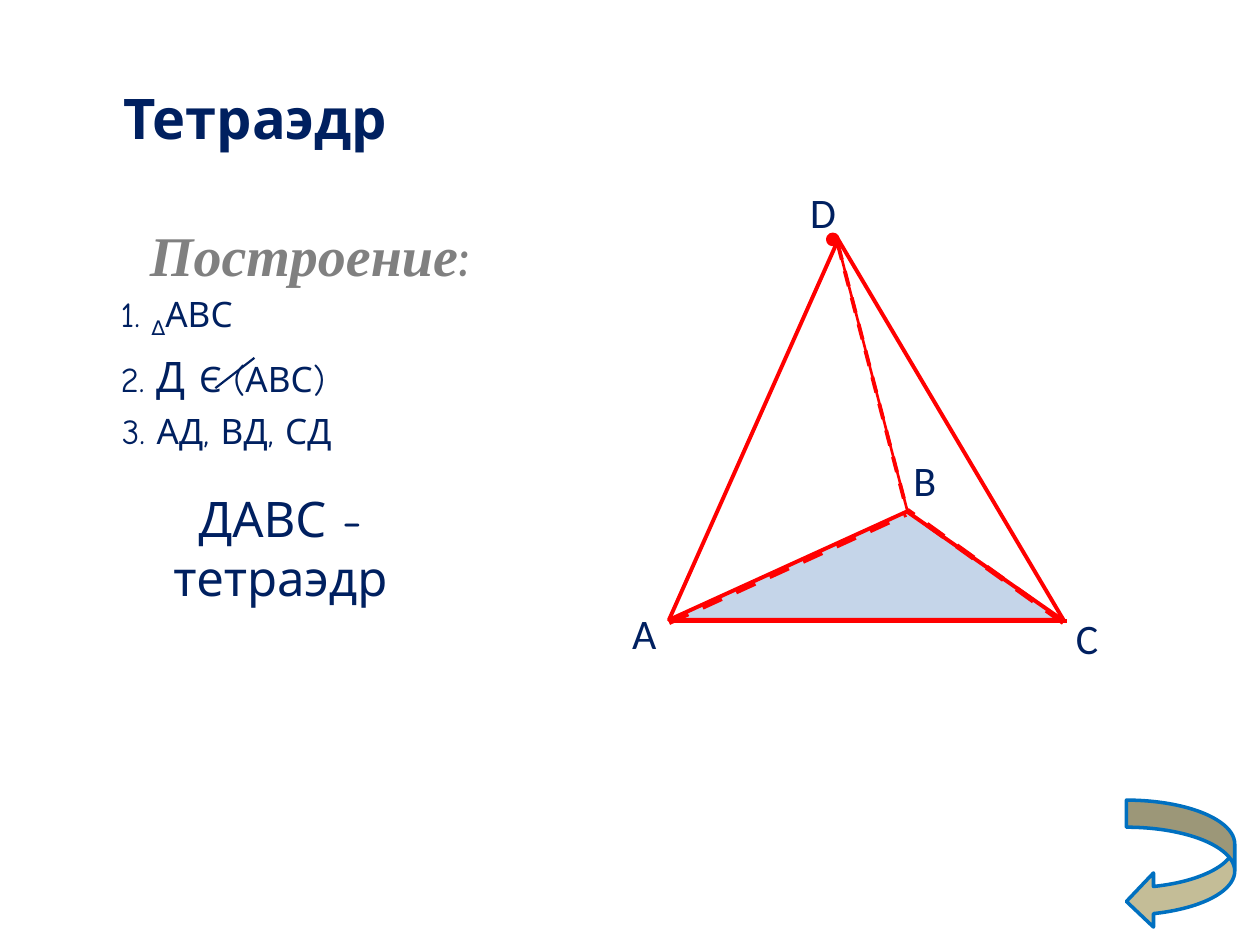
from lxml import etree
from pptx import Presentation
from pptx.dml.color import RGBColor
from pptx.enum import dml, shapes, text
from pptx.oxml import ns
from pptx.util import Pt

NAVY = RGBColor(0x00, 0x20, 0x60)
GRAY = RGBColor(0x80, 0x80, 0x80)
RED = RGBColor(0xFF, 0x00, 0x00)
BLUE = RGBColor(0x4F, 0x81, 0xBD)
SAND = RGBColor(0xC4, 0xBD, 0x97)
AZURE = RGBColor(0x00, 0x70, 0xC0)
BODY_FONT = "Comic Neue"


def add_color(parent, color):
    """Append a solid fill and return its colour element."""
    fill = etree.SubElement(parent, ns.qn("a:solidFill"))
    return etree.SubElement(fill, ns.qn("a:srgbClr"), val=str(color))


class Sketch:
    def __init__(self, page):
        self.page = page

    def add_text(self, left, top, width, height, *parts, centered=False, wrap=True):
        """Add one paragraph; each part is (wording, size, font options)."""
        box = self.page.shapes.add_textbox(Pt(left), Pt(top), Pt(width), Pt(height))
        frame = box.text_frame
        frame.word_wrap = wrap
        frame.auto_size = text.MSO_AUTO_SIZE.SHAPE_TO_FIT_TEXT
        para = frame.paragraphs[0]
        para.alignment = text.PP_ALIGN.CENTER if centered else text.PP_ALIGN.LEFT
        for wording, size, options in parts:
            span = para.add_run()
            span.text = wording
            span.font.size = Pt(size)
            span.font.name = options.get("font", BODY_FONT)
            span.font.color.rgb = options.get("color", NAVY)
            span.font.bold = options.get("bold", False)
            span.font.italic = options.get("italic", False)
            if "baseline" in options:
                span.font._element.set("baseline", str(options["baseline"]))
        return para

    def label(self, letter, left, top):
        """Name a vertex with a thinly outlined letter."""
        para = self.add_text(left, top, 25, 36, (letter, 24, {"font": "Calibri"}),
                             centered=True, wrap=False)
        outline = etree.Element(ns.qn("a:ln"), w=str(int(Pt(0.8))))
        add_color(outline, BLUE)
        para.runs[0].font._element.insert(0, outline)

    def shape(self, kind, left, top, width, height, fill, line, weight, alpha=None):
        shape = self.page.shapes.add_shape(kind, Pt(left), Pt(top), Pt(width), Pt(height))
        shape.shadow.inherit = False
        shape.fill.solid()
        shape.fill.fore_color.rgb = fill
        shape.line.color.rgb = line
        shape.line.width = Pt(weight)
        if alpha is not None:
            color = shape._element.spPr.find(ns.qn("a:solidFill"))[0]
            etree.SubElement(color, ns.qn("a:alpha"), val=str(alpha * 1000))
        return shape

    def line(self, start, end, weight, color=RED, dashed=False):
        line = self.page.shapes.add_connector(
            shapes.MSO_CONNECTOR.STRAIGHT, *map(Pt, (*start, *end)))
        line.line.color.rgb = color
        line.line.width = Pt(weight)
        if dashed:
            line.line.dash_style = dml.MSO_LINE.DASH
        etree.SubElement(line._element.spPr, ns.qn("a:effectLst"))


def main():
    deck = Presentation()
    deck.slide_width, deck.slide_height = Pt(720), Pt(540)
    sketch = Sketch(deck.slides.add_slide(deck.slide_layouts[6]))
    kinds = shapes.MSO_SHAPE

    sketch.add_text(50.4, 43.9, 191.5, 46, ("Тетраэдр", 32, {"bold": True}), centered=True)
    heading = {"color": GRAY, "bold": True, "italic": True, "font": "Times New Roman"}
    sketch.add_text(50.4, 122.4, 253.4, 46, ("Построение", 32, heading),
                    (":", 32, {"color": GRAY, "bold": True}), centered=True)

    base = sketch.shape(kinds.ISOSCELES_TRIANGLE, 382.3, 292.3, 224.7, 61.9,
                        BLUE, RED, 2.25, alpha=33)
    base.adjustments[0] = 0.605

    sketch.add_text(61.9, 163.4, 191.5, 31.7, ("1. ", 20, {}),
                    ("∆", 20, {"baseline": -25000}), ("АВС", 20, {}))
    sketch.add_text(61.9, 196.6, 191.5, 36.7, ("2. ", 20, {}), ("Д ", 24, {}),
                    ("Є (АВС)", 20, {}))
    sketch.add_text(62.6, 230.4, 191.5, 31.7, ("3. АД, ВД, СД", 20, {}))
    sketch.line((145.4, 204.5), (123.1, 221.8), 1.25, NAVY)

    for letter, left, top in (("A", 354.2, 343.4), ("В", 514.8, 256.3),
                              ("С", 607.7, 346.3), ("D", 455.8, 103)):
        sketch.label(letter, left, top)
    sketch.shape(kinds.FLOWCHART_CONNECTOR, 473, 133.9, 5.8, 5.8, RED, RED, 2)

    sketch.line((478.1, 139), (382.3, 354.2), 2.25)
    sketch.line((477.4, 133.9), (518.4, 291.6), 1.5)
    sketch.line((478.1, 135.4), (607.7, 354.2), 2.25)
    sketch.shape(kinds.CURVED_LEFT_ARROW, 643.7, 457.2, 61.9, 73.4, SAND, AZURE, 2)
    sketch.add_text(50.4, 275.8, 219.6, 74.9, ("ДАВС - тетраэдр", 28, {}), centered=True)
    sketch.line((382.3, 355.7), (517.7, 293.8), 3, dashed=True)
    sketch.line((607.7, 355.7), (518.4, 291.6), 3, dashed=True)
    sketch.line((382.3, 355), (609.8, 355), 2.25)
    sketch.line((478.8, 139.7), (518.4, 292.3), 2.25, dashed=True)

    deck.save("out.pptx")


if __name__ == "__main__":
    main()
